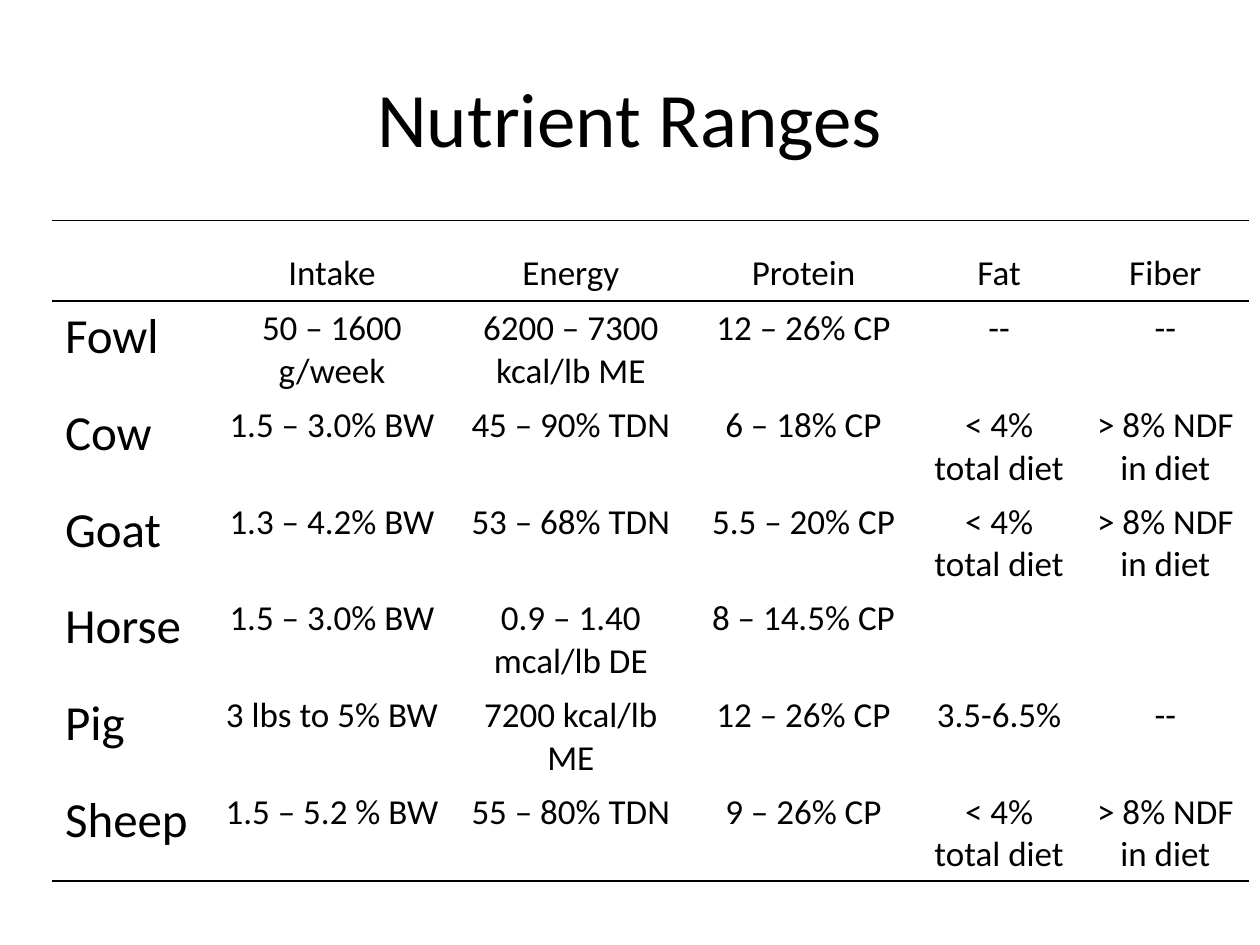
"""Build a slide with a table of nutrient ranges for farm animals."""
from dataclasses import dataclass

from lxml import etree
from pptx import Presentation, util as u
from pptx.dml.color import RGBColor
from pptx.enum import text
from pptx.oxml import ns

COLORS = {"ink": "000000"}
FONT = "Calibri"
ROW_HEIGHT = 46


@dataclass
class Column:
    heading: str
    width: float


@dataclass
class Animal:
    name: str
    ranges: tuple[str, ...]


COLUMNS = [
    Column("", 91.5),
    Column("Intake", 136.5),
    Column("Energy", 136.5),
    Column("Protein", 129.5),
    Column("Fat", 94),
    Column("Fiber", 96),
]
RUMINANT_LIMITS = ("< 4% total diet", "> 8% NDF in diet")
ANIMALS = [
    Animal("Fowl", ("50 – 1600 g/week", "6200 – 7300 kcal/lb ME", "12 – 26% CP", "--", "--")),
    Animal("Cow", ("1.5 – 3.0% BW", "45 – 90% TDN", "6 – 18% CP", *RUMINANT_LIMITS)),
    Animal("Goat", ("1.3 – 4.2% BW", "53 – 68% TDN", "5.5 – 20% CP", *RUMINANT_LIMITS)),
    Animal("Horse", ("1.5 – 3.0% BW", "0.9 – 1.40 mcal/lb DE", "8 – 14.5% CP", "", "")),
    Animal("Pig", ("3 lbs to 5% BW", "7200 kcal/lb ME", "12 – 26% CP", "3.5-6.5%", "--")),
    Animal("Sheep", ("1.5 – 5.2 % BW", "55 – 80% TDN", "9 – 26% CP", *RUMINANT_LIMITS)),
]


def write(para, wording: str, size: float, align) -> None:
    """Put one formatted span into a paragraph."""
    para.alignment = align
    para.font.size = u.Pt(size)
    if not wording:
        return
    span = para.add_run()
    span.text = wording
    for name, value in {"size": u.Pt(size), "name": FONT, "bold": False}.items():
        setattr(span.font, name, value)
    span.font.color.rgb = RGBColor.from_string(COLORS["ink"])


def set_borders(cell, ruled: set[str]) -> None:
    """Rule the named sides of a cell and clear the others."""
    properties = cell._tc.get_or_add_tcPr()
    for side in "LRTB":
        line = etree.SubElement(properties, ns.qn(f"a:ln{side}"), w=str(u.Pt(1)))
        if side in ruled:
            fill = etree.SubElement(line, ns.qn("a:solidFill"))
            etree.SubElement(fill, ns.qn("a:srgbClr"), val=COLORS["ink"])
        else:
            etree.SubElement(line, ns.qn("a:noFill"))


def add_title(page, wording: str) -> None:
    """Add the centred slide title."""
    box = page.shapes.add_textbox(u.Pt(36), u.Pt(21.6), u.Pt(648), u.Pt(90))
    frame = box.text_frame
    for name, value in {"word_wrap": True, "vertical_anchor": text.MSO_ANCHOR.MIDDLE}.items():
        setattr(frame, name, value)
    write(frame.paragraphs[0], wording, 44, text.PP_ALIGN.CENTER)


def add_ranges(page, columns: list[Column], animals: list[Animal]) -> None:
    """Add the table with one row for each animal."""
    rows = [[column.heading for column in columns]]
    rows += [[animal.name, *animal.ranges] for animal in animals]
    width = sum(column.width for column in columns)
    table = page.shapes.add_table(
        len(rows), len(columns), u.Pt(30), u.Pt(126), u.Pt(width), u.Pt(ROW_HEIGHT * len(rows))
    ).table
    for name in ("first_row", "horz_banding"):
        setattr(table, name, False)
    for index, column in enumerate(columns):
        table.columns[index].width = u.Pt(column.width)

    last = len(rows) - 1
    ruled_sides = {0: {"T", "B"}, 1: {"T"}, last: {"B"}}
    for row, wordings in enumerate(rows):
        for column, wording in enumerate(wordings):
            cell = table.cell(row, column)
            is_name = row > 0 and column == 0
            align = text.PP_ALIGN.LEFT if is_name else text.PP_ALIGN.CENTER
            write(cell.text_frame.paragraphs[0], wording, 28 if is_name else 20, align)
            cell.vertical_anchor = text.MSO_ANCHOR.TOP if row else text.MSO_ANCHOR.BOTTOM
            set_borders(cell, ruled_sides.get(row, set()))
            cell.fill.background()


def main() -> None:
    """Create and save the deck."""
    deck = Presentation()
    for name, value in {"slide_width": u.Pt(720), "slide_height": u.Pt(540)}.items():
        setattr(deck, name, value)
    page = deck.slides.add_slide(deck.slide_layouts[6])
    add_title(page, "Nutrient Ranges")
    add_ranges(page, COLUMNS, ANIMALS)
    deck.save("out.pptx")


if __name__ == "__main__":
    main()
